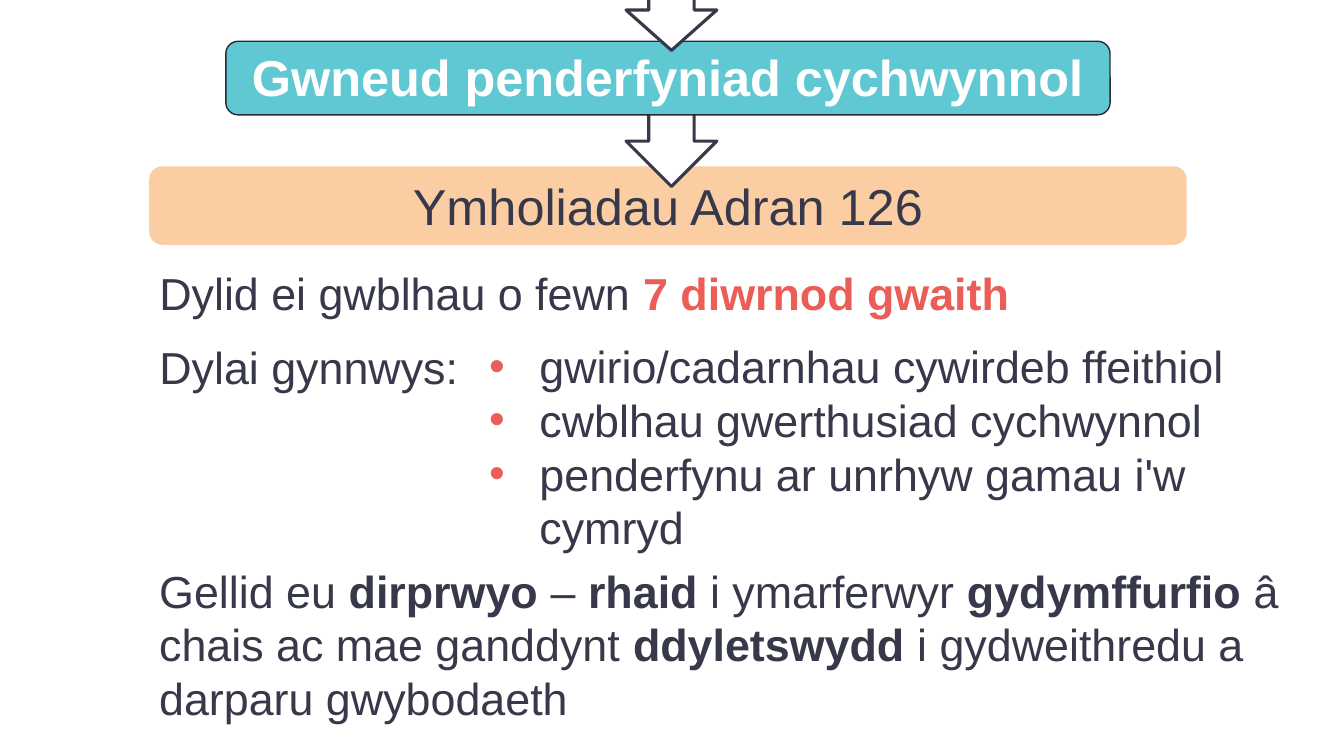
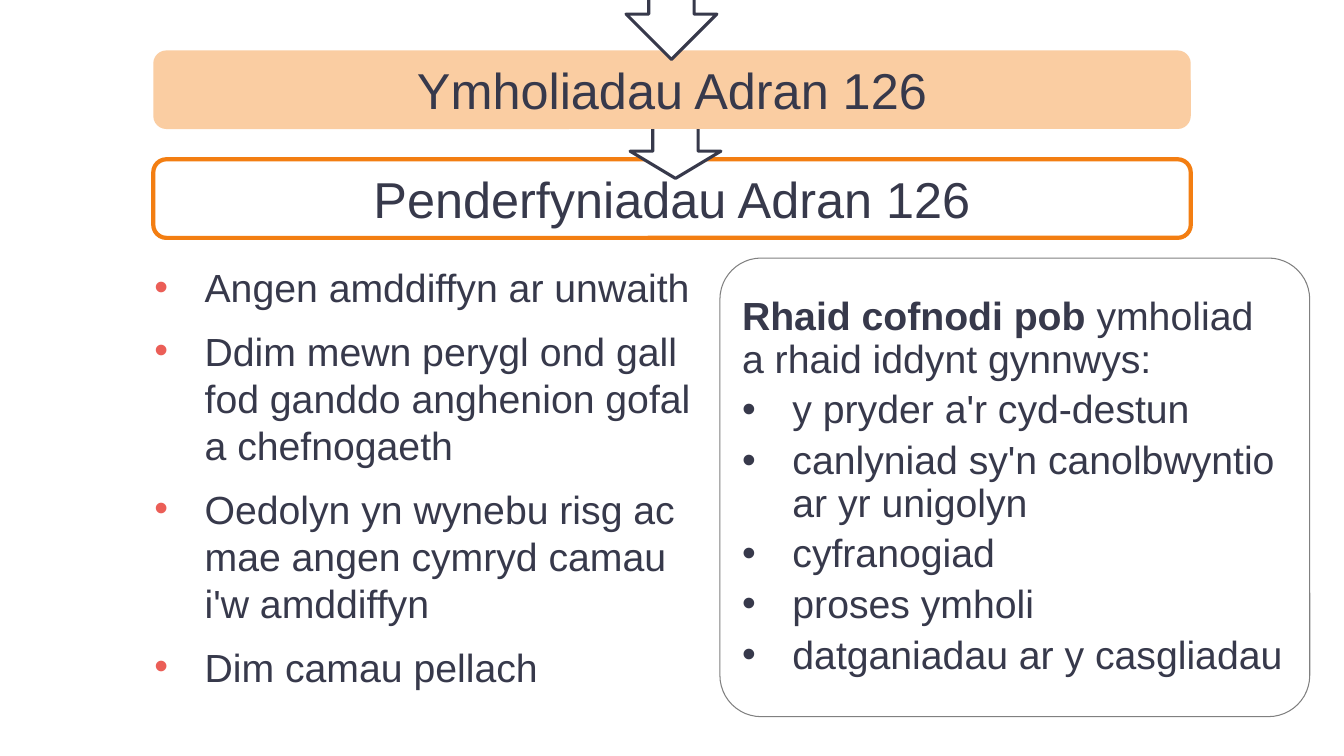
from dataclasses import dataclass

from lxml.etree import SubElement
from pptx import Presentation
from pptx.dml.color import RGBColor
from pptx.enum.shapes import MSO_SHAPE
from pptx.enum.text import MSO_ANCHOR, MSO_AUTO_SIZE, PP_ALIGN
from pptx.oxml.ns import qn
from pptx.util import Inches, Pt


@dataclass(frozen=True)
class Theme:
    font: str = "Arial"
    ink: str = "37394B"
    white: str = "FFFFFF"
    red: str = "EB5E57"
    teal: str = "60C8D3"
    peach: str = "FACDA2"
    orange: str = "F37E12"
    dark: str = "292A38"
    grey: str = "808080"
    head: int = 36
    body: int = 32
    small: int = 28


THEME = Theme()


def paint(text):
    return RGBColor.from_string(text)


def mark(para, color):
    """Give a paragraph a hanging bullet, or none when color is None."""
    props = para._p.get_or_add_pPr()
    indent = Inches(0.5) if color else 0
    props.set("marL", str(indent))
    props.set("indent", str(-indent))
    if not color:
        SubElement(props, qn("a:buNone"))
        return
    tint = SubElement(props, qn("a:buClr"))
    SubElement(tint, qn("a:srgbClr"), val=color)
    SubElement(props, qn("a:buFont"), typeface=THEME.font)
    SubElement(props, qn("a:buChar"), char="•")


def write(frame, text, size=THEME.body, color=THEME.ink, strong=None,
          bold=False, align=PP_ALIGN.LEFT, after=0, lead=1.0, bullet=None):
    """Add one paragraph per line; *stars* mark bold, | breaks a line."""
    for line in text.split("\n"):
        first = frame.paragraphs[0]
        para = frame.add_paragraph() if first.runs else first
        mark(para, bullet)
        para.alignment = align
        para.line_spacing = lead
        para.space_before = Pt(0)
        para.space_after = Pt(after)
        for i, part in enumerate(line.split("*")):
            for j, piece in enumerate(part.split("|")):
                if j:
                    para.add_line_break()
                if not piece:
                    continue
                run = para.add_run()
                run.text = piece
                font = run.font
                font.name, font.size = THEME.font, Pt(size)
                font.bold = bold or i % 2 == 1
                font.color.rgb = paint(strong if strong and i % 2 else color)


class Deck:
    def __init__(self):
        self.file = Presentation()
        self.file.slide_width = Inches(13.33)
        self.file.slide_height = Inches(7.5)
        self.slide = None

    def start(self):
        self.slide = self.file.slides.add_slide(self.file.slide_layouts[3])

    def shape(self, kind, box, fill=None, line=None, width=1.0):
        item = self.slide.shapes.add_shape(kind, *map(Inches, box))
        item.shadow.inherit = False
        if fill:
            item.fill.solid()
            item.fill.fore_color.rgb = paint(fill)
        else:
            item.fill.background()
        if line:
            item.line.color.rgb = paint(line)
            item.line.width = Pt(width)
        else:
            item.line.fill.background()
        return item

    def band(self, box, text="", anchor=MSO_ANCHOR.MIDDLE,
             fill=None, line=None, width=1.0, **style):
        item = self.shape(MSO_SHAPE.ROUNDED_RECTANGLE, box, fill, line, width)
        if text:
            item.text_frame.vertical_anchor = anchor
            write(item.text_frame, text, size=THEME.head,
                  align=PP_ALIGN.CENTER, **style)
        return item

    def arrow(self, left, top, height):
        self.shape(MSO_SHAPE.DOWN_ARROW, (left, top, 0.9, height),
                   THEME.white, THEME.ink, 2.25)

    def hold(self, index, box, anchor=MSO_ANCHOR.TOP):
        """Move a placeholder in front of the shapes drawn so far."""
        item = self.slide.placeholders[index]
        item.left, item.top, item.width, item.height = map(Inches, box)
        self.slide.shapes._spTree.append(item._element)
        frame = item.text_frame
        frame.word_wrap = True
        frame.auto_size = MSO_AUTO_SIZE.NONE
        frame.vertical_anchor = anchor
        return frame

    def title(self, box, text):
        write(self.hold(0, box, MSO_ANCHOR.MIDDLE), text,
              size=THEME.head, align=PP_ALIGN.CENTER)

    def note(self, box, text, **style):
        frame = self.slide.shapes.add_textbox(*map(Inches, box)).text_frame
        frame.word_wrap = True
        write(frame, text, **style)


def query(deck):
    deck.start()

    # Flow from first decision to enquiries
    band = (1.48, 1.65, 10.29, 0.78)
    deck.band(band, fill=THEME.peach)
    deck.arrow(6.21, 0.85, 1)
    deck.band((2.24, 0.41, 8.77, 0.73), "Gwneud penderfyniad cychwynnol",
              MSO_ANCHOR.BOTTOM, THEME.teal, THEME.dark,
              color=THEME.white, bold=True, lead=0.8)
    deck.arrow(6.21, -0.3, 0.8)
    deck.title(band, "Ymholiadau Adran 126")

    # Time limit and content
    write(deck.hold(1, (1.48, 2.65, 11.3, 1.18)),
          "Dylid ei gwblhau o fewn *7 diwrnod gwaith*\nDylai gynnwys:",
          strong=THEME.red, after=18, lead=0.9)
    write(deck.hold(2, (4.75, 3.31, 8.55, 2.59)),
          "gwirio/cadarnhau cywirdeb ffeithiol\n"
          "cwblhau gwerthusiad cychwynnol\n"
          "penderfynu ar unrhyw gamau i'w cymryd",
          bullet=THEME.red)

    # Duty to cooperate
    deck.note((1.48, 5.54, 11.35, 1.72),
              "Gellid eu *dirprwyo* – *rhaid* i ymarferwyr *gydymffurfio* "
              "â chais ac mae ganddynt *ddyletswydd* i gydweithredu a "
              "darparu gwybodaeth")


def ruling(deck):
    deck.start()

    # Flow from enquiries to decisions
    band = (1.52, 1.58, 10.29, 0.78)
    deck.band(band, line=THEME.orange, width=3)
    deck.arrow(6.25, 1.23, 0.54)
    deck.band((1.52, 0.5, 10.29, 0.78), "Ymholiadau Adran 126",
              fill=THEME.peach)
    deck.arrow(6.21, -0.41, 1)
    deck.title(band, "Penderfyniadau Adran 126")

    # Possible decisions
    write(deck.hold(1, (1.43, 2.56, 5.62, 4.38)),
          "Angen amddiffyn ar unwaith\n"
          "Ddim mewn perygl ond gall fod ganddo anghenion gofal a chefnogaeth\n"
          "Oedolyn yn wynebu risg ac mae angen cymryd camau i'w amddiffyn\n"
          "Dim camau pellach",
          size=THEME.small, after=12, bullet=THEME.red)

    # Framed list of what to record
    panel = deck.band((7.14, 2.56, 5.85, 4.55), line=THEME.grey, width=0.75)
    panel.adjustments[0] = 0.09
    frame = deck.hold(2, (7.26, 2.56, 5.6, 4.55), MSO_ANCHOR.MIDDLE)
    style = dict(size=THEME.small, after=6, lead=0.9)
    write(frame, "*Rhaid cofnodi pob* ymholiad|a rhaid iddynt gynnwys:", **style)
    write(frame,
          "y pryder a'r cyd-destun\n"
          "canlyniad sy'n canolbwyntio ar yr unigolyn\n"
          "cyfranogiad\n"
          "proses ymholi\n"
          "datganiadau ar y casgliadau",
          bullet=THEME.ink, **style)


def main():
    deck = Deck()
    query(deck)
    ruling(deck)
    deck.file.save("out.pptx")


if __name__ == "__main__":
    main()
